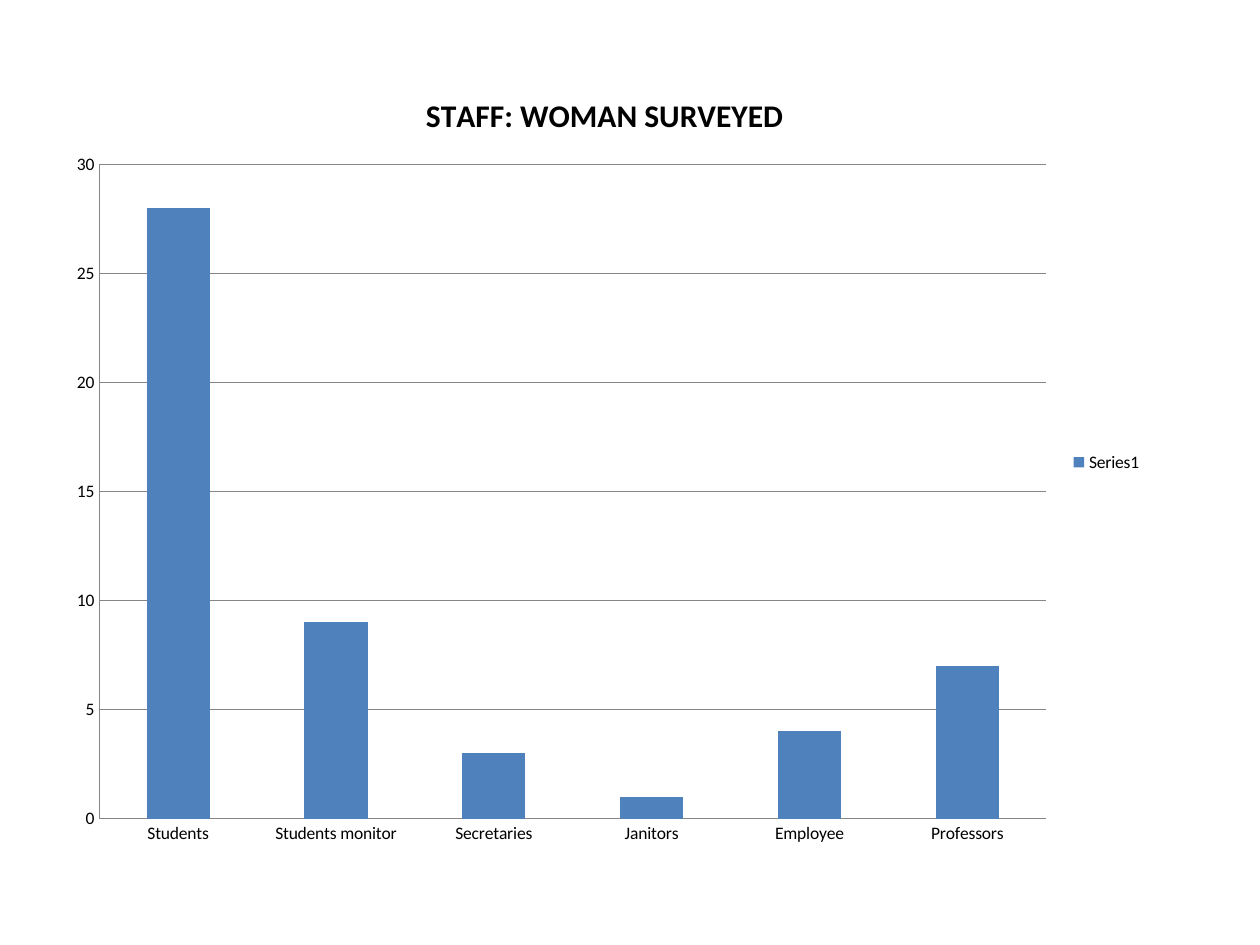
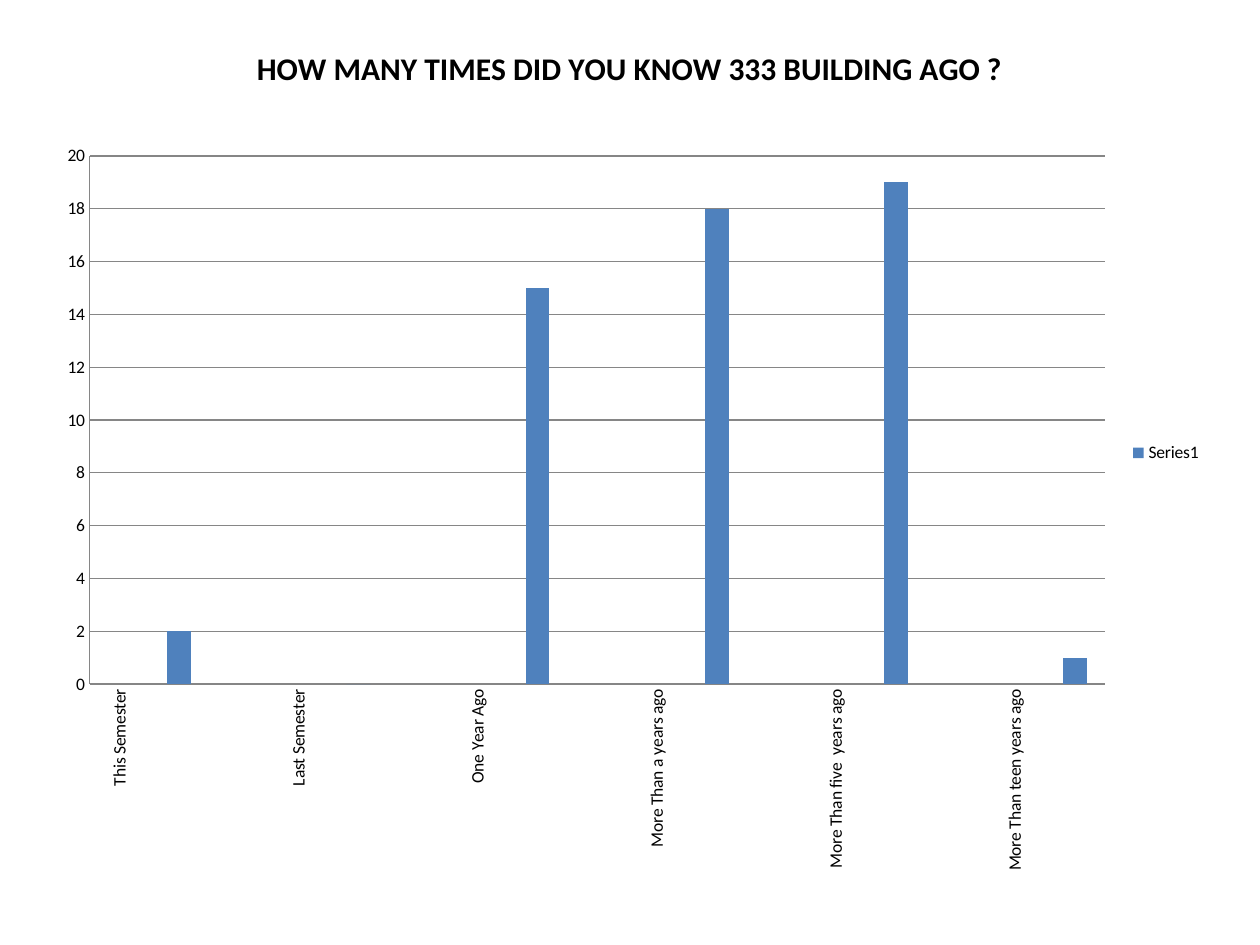
from lxml import etree
from pptx import Presentation
from pptx.chart.data import CategoryChartData
from pptx.dml.color import RGBColor
from pptx.enum.chart import XL_CHART_TYPE, XL_LEGEND_POSITION, XL_TICK_MARK
from pptx.oxml.ns import qn
from pptx.util import Cm, Pt

COLUMNS = XL_CHART_TYPE.COLUMN_CLUSTERED
LEGEND_RIGHT = XL_LEGEND_POSITION.RIGHT
NO_TICKS = XL_TICK_MARK.NONE

COLORS = {"text": "000000", "bar": "4F81BD", "line": "868686"}
FONT = "Calibri"
BLANK_LAYOUT = 6

STAFF = {
    "Students": 28,
    "Students monitor": 9,
    "Secretaries": 3,
    "Janitors": 1,
    "Employee": 4,
    "Professors": 7,
}
FIRST_KNOWN = {
    "This Semester": 2,
    "Last Semester": 0,
    "One Year Ago": 15,
    "More Than a years ago": 18,
    "More Than five  years ago": 19,
    "More Than teen years ago": 1,
}


def rgb(name):
    return RGBColor.from_string(COLORS[name])


def style_font(font, size, bold=False):
    font.name = FONT
    font.size = Pt(size)
    font.bold = bold
    font.color.rgb = rgb("text")


def style_line(line):
    line.color.rgb = rgb("line")
    line.width = Pt(0.75)


def spread_rows(counts):
    """Put each label one row before its count, with an empty row after them."""
    rows = []
    for label, count in counts.items():
        rows += [(label, None), ("", count), ("", None)]
    return rows[:-1]


def place_plot(chart, plot_box):
    """Fix the inner plot area; plot_box holds x, y, w, h as parts of the chart."""
    plot_area = chart._chartSpace.chart.plotArea
    for old in plot_area.findall(qn("c:layout")):
        plot_area.remove(old)
    layout = etree.Element(qn("c:layout"))
    manual = etree.SubElement(layout, qn("c:manualLayout"))
    settings = [("layoutTarget", "inner"), ("xMode", "edge"), ("yMode", "edge")]
    for tag, value in settings + list(zip("xywh", plot_box)):
        etree.SubElement(manual, qn(f"c:{tag}")).set("val", str(value))
    plot_area.insert(0, layout)


def style_axes(chart, top, step, upright_labels):
    counts, groups = chart.value_axis, chart.category_axis
    counts.minimum_scale, counts.maximum_scale = 0, top
    counts.major_unit = step
    counts.has_major_gridlines = True
    style_line(counts.major_gridlines.format.line)
    for axis in (counts, groups):
        axis.major_tick_mark = axis.minor_tick_mark = NO_TICKS
        style_font(axis.tick_labels.font, 10)
        style_line(axis.format.line)
    if upright_labels:
        label_body = groups._element.find(qn("c:txPr")).find(qn("a:bodyPr"))
        label_body.set("rot", "-5400000")
        label_body.set("vert", "horz")


def add_survey_slide(prs, title, rows, box, plot_box, top, step, upright_labels=False):
    slide = prs.slides.add_slide(prs.slide_layouts[BLANK_LAYOUT])
    labels, counts = zip(*rows)
    survey = CategoryChartData()
    survey.categories = labels
    survey.add_series("Series1", counts)
    chart = slide.shapes.add_chart(COLUMNS, *map(Cm, box), survey).chart
    style_font(chart.font, 10)

    chart.has_title = True
    heading = chart.chart_title.text_frame
    heading.text = title
    style_font(heading.paragraphs[0].runs[0].font, 18, bold=True)
    chart.chart_title.include_in_layout = False

    chart.has_legend = True
    chart.legend.position = LEGEND_RIGHT
    chart.legend.include_in_layout = False
    style_font(chart.legend.font, 10)

    plot = chart.plots[0]
    plot.gap_width = 150
    plot.vary_by_categories = False
    bars = plot.series[0].format.fill
    bars.solid()
    bars.fore_color.rgb = rgb("bar")

    style_axes(chart, top, step, upright_labels)
    place_plot(chart, plot_box)


def main():
    prs = Presentation()
    prs.slide_width, prs.slide_height = Cm(25.4), Cm(19.05)
    add_survey_slide(
        prs, "STAFF: WOMAN SURVEYED", list(STAFF.items()),
        box=(1.09, 1.32, 22.2, 16), plot_box=(0.041, 0.125, 0.86, 0.824),
        top=30, step=5,
    )
    add_survey_slide(
        prs, "HOW MANY TIMES DID YOU KNOW 333 BUILDING AGO ?", spread_rows(FIRST_KNOWN),
        box=(0.89, 0.33, 23.6, 17.6), plot_box=(0.039, 0.16, 0.867, 0.605),
        top=20, step=2, upright_labels=True,
    )
    prs.save("out.pptx")


if __name__ == "__main__":
    main()
